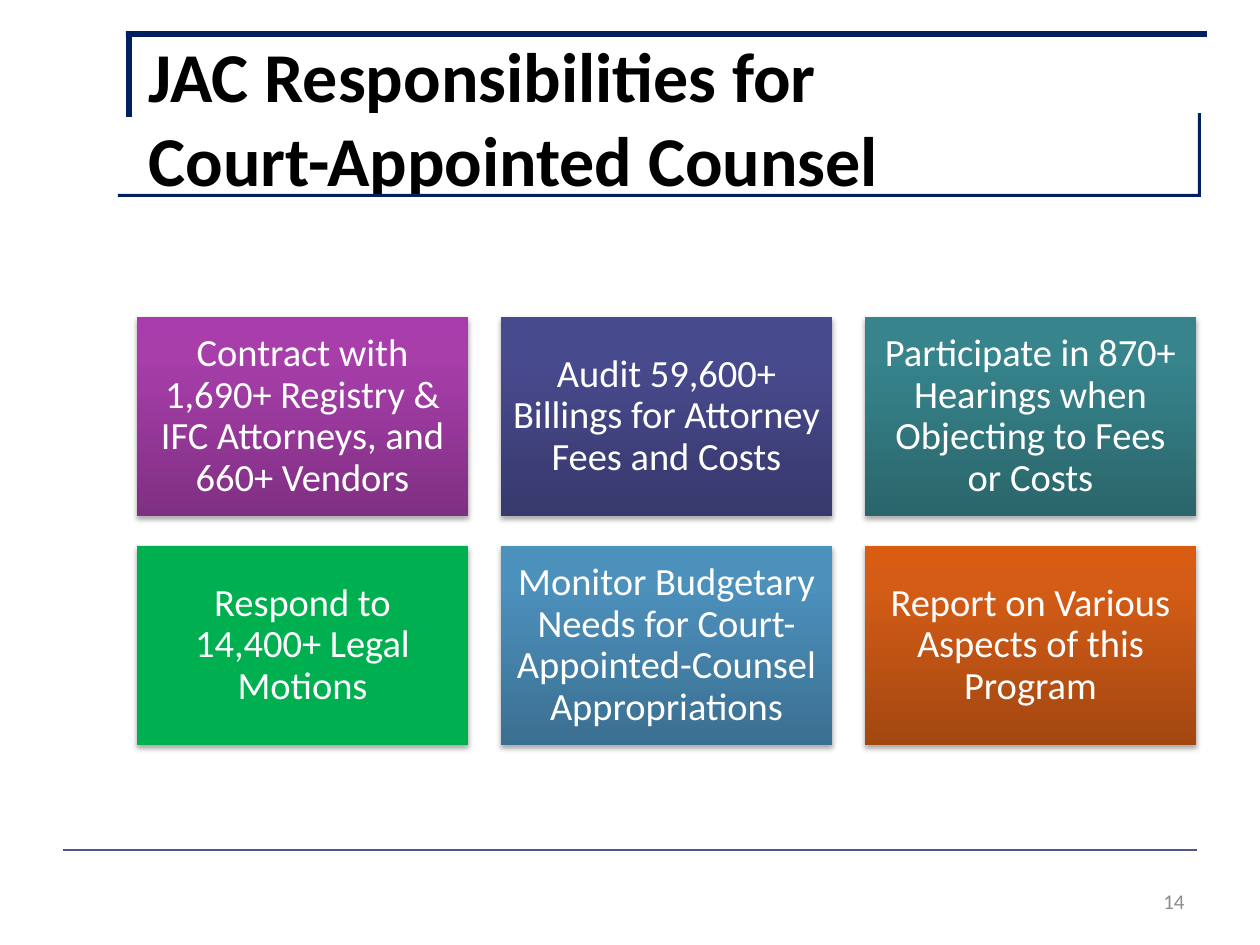
from copy import deepcopy

from lxml.etree import SubElement
from pptx import Presentation
from pptx.dml.color import RGBColor
from pptx.enum.shapes import MSO_CONNECTOR, MSO_SHAPE
from pptx.enum.text import MSO_ANCHOR, MSO_AUTO_SIZE, PP_ALIGN
from pptx.oxml.ns import qn
from pptx.util import Emu, Pt

FONT = "Calibri"
BLACK = RGBColor(0x00, 0x00, 0x00)
WHITE = RGBColor(0xFF, 0xFF, 0xFF)
GRAY = RGBColor(0x8C, 0x8C, 0x8C)
NAVY = RGBColor(0x00, 0x20, 0x60)
INDIGO = RGBColor(0x53, 0x54, 0x8A)
GREEN = RGBColor(0x00, 0xB0, 0x50)
# Gradients run from the bottom of the card to the top
PURPLES = RGBColor(0x80, 0x30, 0x83), RGBColor(0xA7, 0x3E, 0xAA), RGBColor(0xA9, 0x3C, 0xAD)
INDIGOS = RGBColor(0x38, 0x39, 0x6D), RGBColor(0x48, 0x4A, 0x8E), RGBColor(0x47, 0x49, 0x90)
TEALS = RGBColor(0x2A, 0x66, 0x6B), RGBColor(0x37, 0x84, 0x8C), RGBColor(0x36, 0x86, 0x8E)
BLUES = RGBColor(0x3B, 0x6F, 0x91), RGBColor(0x4C, 0x90, 0xBC), RGBColor(0x4A, 0x91, 0xBF)
ORANGES = RGBColor(0xA3, 0x47, 0x11), RGBColor(0xD4, 0x5C, 0x16), RGBColor(0xD9, 0x5C, 0x12)
GRADIENT_POSITIONS = 0, 0.8, 1

TITLE_BARS = [
    (118, 194, 1081, 3),
    (126, 31, 1081, 6),
    (126, 33, 6, 84),
    (1198, 113, 3, 84),
]
CARDS = [
    ("Contract with 1,690+ Registry & IFC Attorneys, and 660+ Vendors", PURPLES),
    ("Audit 59,600+ Billings for Attorney Fees and Costs", INDIGOS),
    ("Participate in 870+ Hearings when Objecting to Fees or Costs", TEALS),
    ("Respond to 14,400+ Legal Motions", GREEN),
    ("Monitor Budgetary Needs for Court-Appointed-Counsel Appropriations", BLUES),
    ("Report on Various Aspects of this Program", ORANGES),
]
COLUMNS = 3
CARD_LEFT, CARD_TOP = 137, 317
CARD_W, CARD_H = 331, 199
CARD_PITCH_X, CARD_PITCH_Y = 364, 229
CARD_INSET = 11


def px(n):
    return Emu(round(n * 914400 / 126))


def place(sp, left, top, width, height):
    sp.left, sp.top, sp.width, sp.height = map(px, (left, top, width, height))


def style_text(tf, size, color, align, bold=False):
    tf.word_wrap = True
    tf.auto_size = MSO_AUTO_SIZE.NONE
    tf.vertical_anchor = MSO_ANCHOR.MIDDLE
    for p in tf.paragraphs:
        p.alignment = align
        for r in p.runs:
            r.font.name = FONT
            r.font.size = Pt(size)
            r.font.bold = bold
            r.font.color.rgb = color


def add_rect(s, left, top, width, height):
    sp = s.shapes.add_shape(MSO_SHAPE.RECTANGLE, *map(px, (left, top, width, height)))
    sp.shadow.inherit = False
    sp.line.fill.background()
    return sp


def fill_solid(sp, color):
    sp.fill.solid()
    sp.fill.fore_color.rgb = color


def fill_gradient(sp, colors):
    sp.fill.gradient()
    sp.fill.gradient_angle = 90
    stops = sp._element.spPr.find(qn("a:gradFill")).find(qn("a:gsLst"))
    stops.append(deepcopy(stops[-1]))
    for stop, position, color in zip(sp.fill.gradient_stops, GRADIENT_POSITIONS, colors):
        stop.position = position
        stop.color.rgb = color


def add_drop_shadow(sp):
    effects = sp._element.spPr.find(qn("a:effectLst"))
    shadow = SubElement(effects, qn("a:outerShdw"), blurRad=str(Pt(3.1)),
                        dist=str(Pt(1.8)), dir="5400000", rotWithShape="0")
    color = SubElement(shadow, qn("a:srgbClr"), val=str(BLACK))
    SubElement(color, qn("a:alpha"), val="35000")


def add_card(s, index, text, color):
    row, col = divmod(index, COLUMNS)
    sp = add_rect(s, CARD_LEFT + col * CARD_PITCH_X, CARD_TOP + row * CARD_PITCH_Y,
                  CARD_W, CARD_H)
    if isinstance(color, RGBColor):
        fill_solid(sp, color)
    else:
        fill_gradient(sp, color)
    add_drop_shadow(sp)
    tf = sp.text_frame
    tf.text = text
    tf.margin_left = tf.margin_right = tf.margin_top = tf.margin_bottom = px(CARD_INSET)
    style_text(tf, 22, WHITE, PP_ALIGN.CENTER)
    p = tf.paragraphs[0]
    p.line_spacing = 0.9
    p.space_after = Pt(7.7)


def add_title(s):
    title = s.shapes.title
    place(title, 136, 38, 1061, 157)
    title.text_frame.text = "JAC Responsibilities for\vCourt-Appointed Counsel"
    style_text(title.text_frame, 40, BLACK, PP_ALIGN.LEFT, bold=True)


def add_footer(s):
    line = s.shapes.add_connector(MSO_CONNECTOR.STRAIGHT, *map(px, (63, 850, 1197, 850)))
    line.line.color.rgb = INDIGO
    line.line.width = Pt(1.5)
    SubElement(line._element.spPr, qn("a:effectLst"))
    number = s.shapes.add_textbox(*map(px, (903, 876, 294, 50)))
    number.text_frame.text = "14"
    style_text(number.text_frame, 12, GRAY, PP_ALIGN.RIGHT)


def main():
    prs = Presentation()
    prs.slide_width, prs.slide_height = px(1260), px(945)
    s = prs.slides.add_slide(prs.slide_layouts[5])
    for bar in TITLE_BARS:
        fill_solid(add_rect(s, *bar), NAVY)
    add_title(s)
    for index, (text, color) in enumerate(CARDS):
        add_card(s, index, text, color)
    add_footer(s)
    prs.save("out.pptx")


if __name__ == "__main__":
    main()
